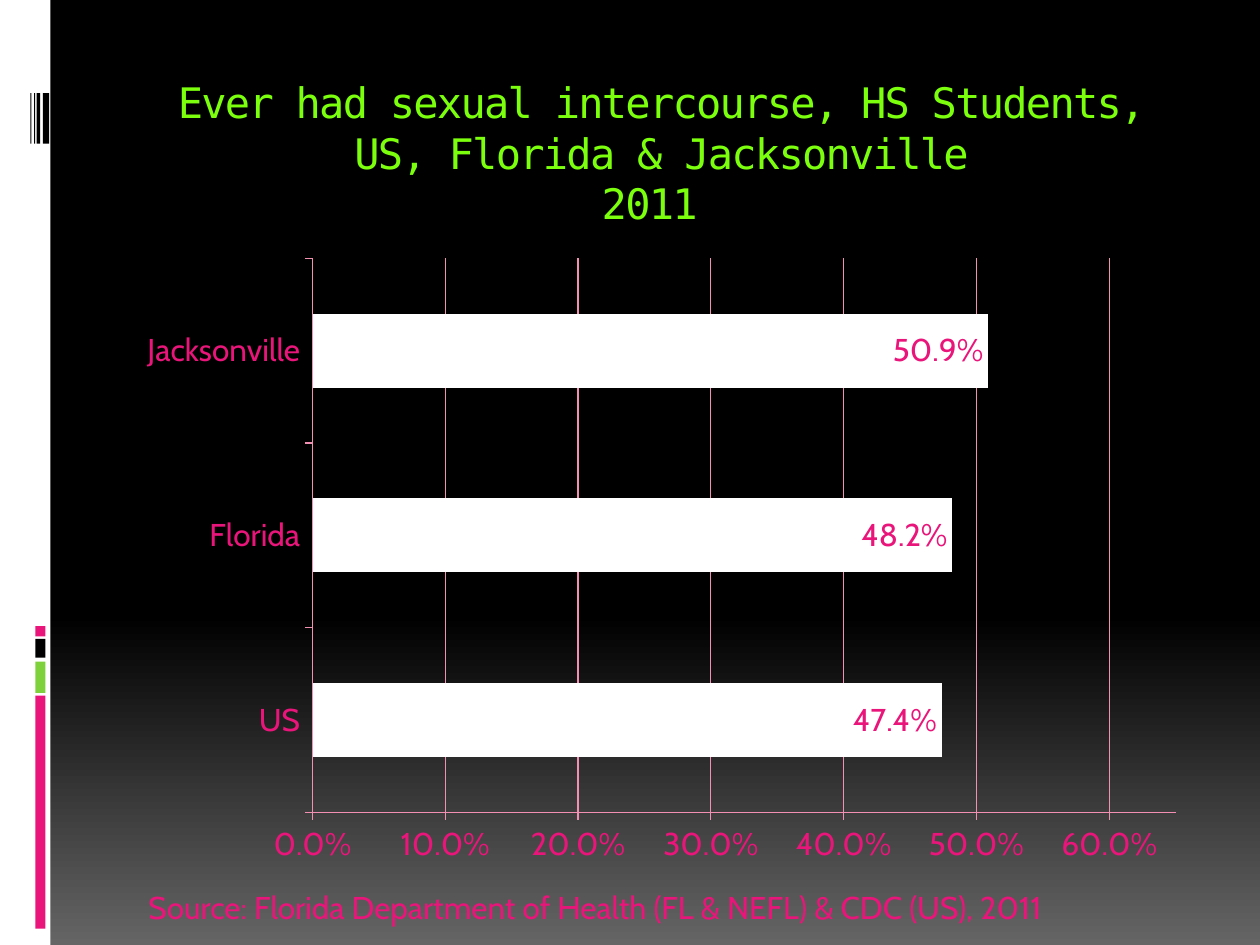
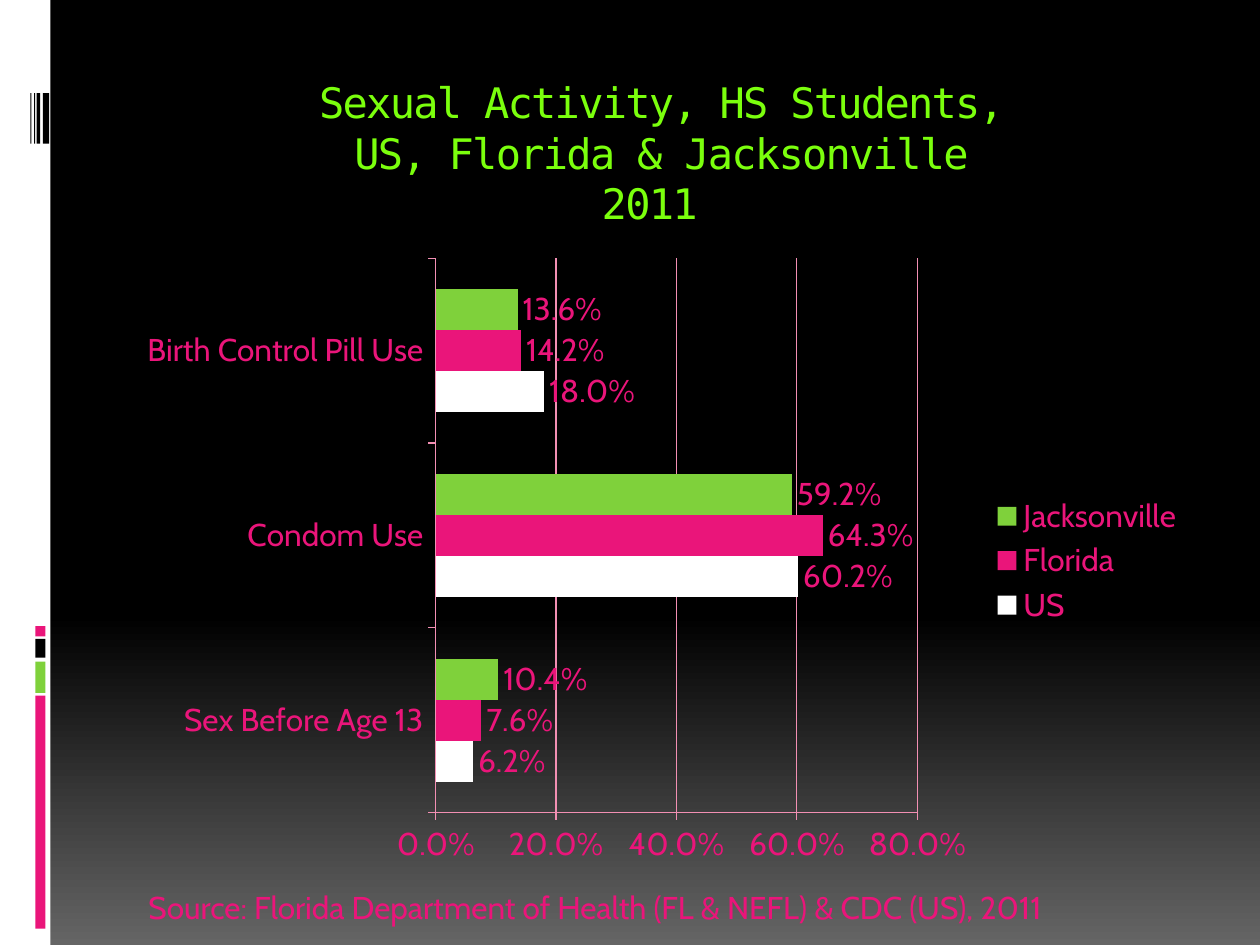
import pptx
import pptx.chart.data
import pptx.dml.color
import pptx.enum.chart
import pptx.enum.shapes
import pptx.enum.text
import pptx.util
from dataclasses import dataclass

Inches = pptx.util.Inches
Pt = pptx.util.Pt
Enum = pptx.enum.chart


@dataclass(frozen=True)
class Theme:
    pink: str = "EA157A"
    green: str = "7FD13B"
    lime: str = "7BFF0D"
    white: str = "FFFFFF"
    black: str = "000000"
    gray: str = "656565"
    grid: str = "F28FB3"
    head: str = "DejaVu Sans Mono"
    body: str = "Cabin"
    large: int = 24
    small: int = 18


THEME = Theme()
SOURCE = "Source: Florida Department of Health (FL & NEFL) & CDC (US), 2011"
PERCENT = {"number_format": "0.0%", "number_format_is_linked": False}

# left, top, width, height, colour
BARS = [
    (0, 0, 0.4, 7.5, THEME.white),
    (0.28, 5.52, 0.08, 1.85, THEME.pink),
    (0.28, 5.25, 0.08, 0.25, THEME.green),
    (0.28, 5.07, 0.08, 0.15, THEME.black),
    (0.28, 4.97, 0.08, 0.08, THEME.pink),
] + [
    (left, 0.74, width, 0.4, THEME.black)
    for left, width in [(0.34, 0.05), (0.29, 0.03), (0.27, 0.01), (0.24, 0.01)]
]


def rgb(code):
    return pptx.dml.color.RGBColor.from_string(code)


def put(item, values):
    """Set each named attribute of item."""
    for name, value in values.items():
        setattr(item, name, value)


def paint(fill, color):
    fill.solid()
    fill.fore_color.rgb = rgb(color)


def style(font, name, size, color):
    put(font, {"name": name, "size": Pt(size), "bold": False})
    font.color.rgb = rgb(color)


class Deck:
    def __init__(self, theme):
        self.theme = theme
        self.show = pptx.Presentation()
        put(self.show, {"slide_width": Inches(10), "slide_height": Inches(7.5)})
        self.slide = None

    def page(self, title):
        """Start a slide with the shared background, side bars, title and source."""
        self.slide = self.show.slides.add_slide(self.show.slide_layouts[6])
        self.shade()
        for *box, color in BARS:
            self.bar(box, color)
        theme = self.theme
        head = self.text((1, 0.56, 8.5, 1), title, theme.head, theme.large, theme.lime)
        head.alignment = pptx.enum.text.PP_ALIGN.CENTER
        for run in head.runs:
            run._r.get_or_add_rPr().set("spc", "-100")
        self.text((1.08, 7, 7.92, 0.4), SOURCE, theme.body, theme.small, theme.pink)

    def shade(self):
        fill = self.slide.background.fill
        fill.gradient()
        fill.gradient_angle = 270
        stops = [(0.65, self.theme.black), (1, self.theme.gray)]
        for stop, (place, color) in zip(fill.gradient_stops, stops):
            stop.position = place
            stop.color.rgb = rgb(color)

    def bar(self, box, color):
        kind = pptx.enum.shapes.MSO_SHAPE.RECTANGLE
        shape = self.slide.shapes.add_shape(kind, *map(Inches, box))
        shape.shadow.inherit = False
        paint(shape.fill, color)
        shape.line.fill.background()

    def text(self, box, words, name, size, color):
        frame = self.slide.shapes.add_textbox(*map(Inches, box)).text_frame
        frame.word_wrap = True
        para = frame.paragraphs[0]
        para.text = words
        for run in para.runs:
            style(run.font, name, size, color)
        return para

    def chart(self, groups, series, top, step, place, legend=False):
        """Add a bar chart; series holds (name, values, colour) rows."""
        data = pptx.chart.data.CategoryChartData(number_format="0.0%")
        data.categories = groups
        for name, values, _ in series:
            data.add_series(name, values)
        box = map(Inches, (1, 1.95, 8.5, 5))
        kind = Enum.XL_CHART_TYPE.BAR_CLUSTERED
        chart = self.slide.shapes.add_chart(kind, *box, data).chart
        put(chart, {"has_title": False, "has_legend": legend})
        theme = self.theme
        look = theme.body, theme.small, theme.pink
        style(chart.font, *look)
        if legend:
            put(chart.legend, {"position": Enum.XL_LEGEND_POSITION.RIGHT,
                               "include_in_layout": False})
            style(chart.legend.font, *look)
        self.axes(chart, top, step, look)
        plot = chart.plots[0]
        put(plot, {"gap_width": 150, "overlap": 0,
                   "vary_by_categories": False, "has_data_labels": True})
        put(plot.data_labels, {"show_value": True, "position": place, **PERCENT})
        style(plot.data_labels.font, *look)
        for row, (_, _, color) in zip(plot.series, series):
            paint(row.format.fill, color)

    def axes(self, chart, top, step, look):
        value = chart.value_axis
        put(value, {"minimum_scale": 0, "maximum_scale": top, "major_unit": step,
                    "has_major_gridlines": True})
        put(value.tick_labels, PERCENT)
        for axis in (chart.category_axis, value):
            axis.major_tick_mark = Enum.XL_TICK_MARK.OUTSIDE
            style(axis.tick_labels.font, *look)
        for part in (chart.category_axis, value, value.major_gridlines):
            part.format.line.width = Pt(0.75)
            part.format.line.color.rgb = rgb(self.theme.grid)


def main():
    deck = Deck(THEME)
    spot = Enum.XL_LABEL_POSITION

    deck.page("Ever had sexual intercourse, HS Students,\v"
              "US, Florida & Jacksonville\v2011 ")
    deck.chart(["US", "Florida", "Jacksonville"],
               [("Series 1", (0.474, 0.482, 0.509), THEME.white)],
               0.65, 0.1, spot.INSIDE_END)

    deck.page("Sexual Activity, HS Students,\vUS, Florida & Jacksonville\v2011 ")
    deck.chart(["Sex Before Age 13", "Condom Use", "Birth Control Pill Use"],
               [("US", (0.062, 0.602, 0.18), THEME.white),
                ("Florida", (0.076, 0.643, 0.142), THEME.pink),
                ("Jacksonville", (0.104, 0.592, 0.136), THEME.green)],
               0.8, 0.2, spot.OUTSIDE_END, legend=True)

    deck.show.save("out.pptx")


if __name__ == "__main__":
    main()
